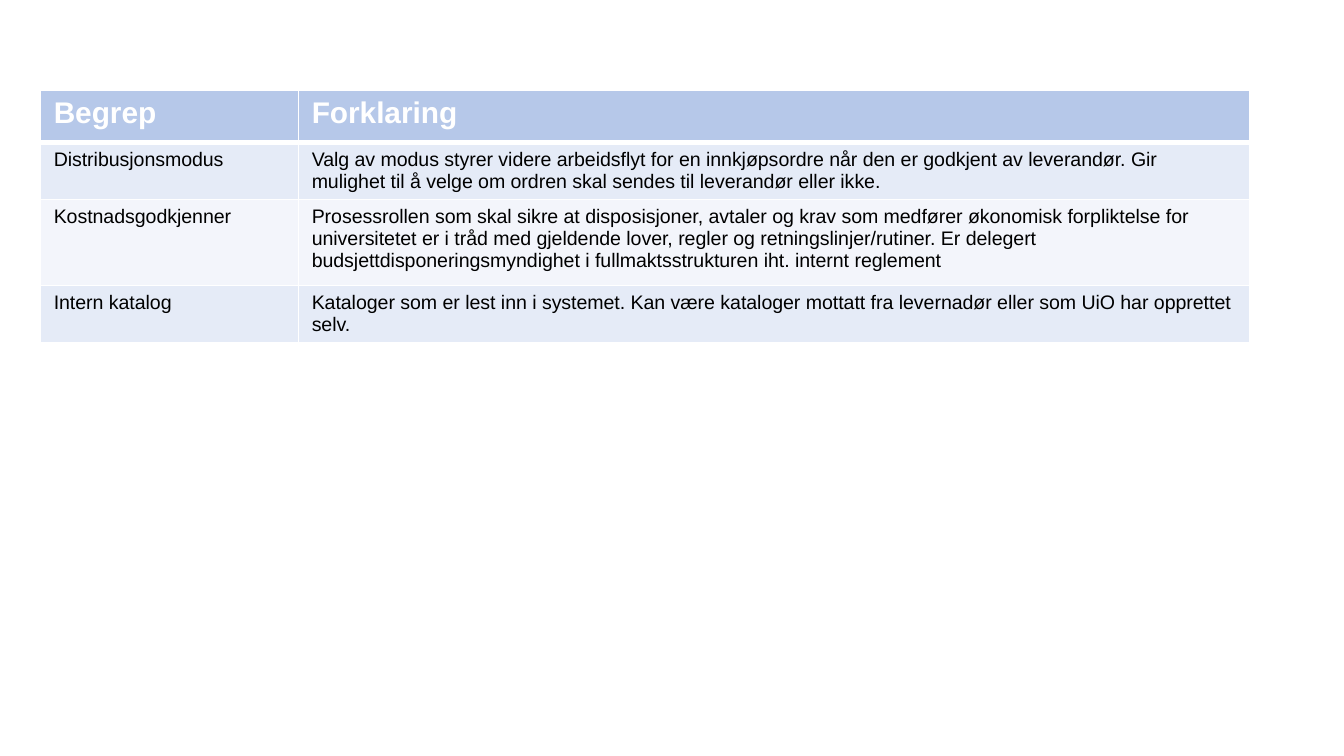
"""Build a slide with a table of procurement terms and their explanations."""
from lxml import etree
from pptx import Presentation
from pptx import util as u
from pptx.dml.color import RGBColor
from pptx.oxml import ns

HUES = {"head": "B6C8E9", "odd": "E5EBF7", "even": "F3F5FB", "line": "FFFFFF", "ink": "000000"}
ROWS = [
    ("Begrep", "Forklaring"),
    ("Distribusjonsmodus",
     "Valg av modus styrer videre arbeidsflyt for en innkjøpsordre når den er godkjent av "
     "leverandør. Gir mulighet til å velge om ordren skal sendes til leverandør eller ikke."),
    ("Kostnadsgodkjenner",
     "Prosessrollen som skal sikre at disposisjoner, avtaler og krav som medfører økonomisk "
     "forpliktelse for universitetet er i tråd med gjeldende lover, regler og "
     "retningslinjer/rutiner. Er delegert budsjettdisponeringsmyndighet i "
     "fullmaktsstrukturen iht. internt reglement"),
    ("Intern katalog",
     "Kataloger som er lest inn i systemet. Kan være kataloger mottatt fra levernadør "
     "eller som UiO har opprettet selv."),
]
WIDTHS = [1.92, 7.08]
HEIGHTS = [0.39, 0.42, 0.64, 0.42]


def write(cell, words, size=10.5, hue="ink", bold=False):
    cell.text = words
    font = cell.text_frame.paragraphs[0].runs[0].font
    font.name = "Arial"
    font.size = u.Pt(size)
    font.bold = bold
    font.color.rgb = RGBColor.from_string(HUES[hue])


def edge(cell, side, width):
    line = etree.SubElement(cell._tc.get_or_add_tcPr(), ns.qn(f"a:ln{side}"), w=str(u.Pt(width)))
    fill = etree.SubElement(line, ns.qn("a:solidFill"))
    etree.SubElement(fill, ns.qn("a:srgbClr"), val=HUES["line"])


deck = Presentation()
deck.slide_width = u.Inches(10)
deck.slide_height = u.Inches(10 * 9 / 16)
slide = deck.slides.add_slide(deck.slide_layouts[6])

table = slide.shapes.add_table(
    len(ROWS), len(WIDTHS), u.Inches(0.3), u.Inches(0.67),
    u.Inches(sum(WIDTHS)), u.Inches(sum(HEIGHTS))).table
for col, width in zip(table.columns, WIDTHS):
    col.width = u.Inches(width)
for row, height in zip(table.rows, HEIGHTS):
    row.height = u.Inches(height)

for r, row in enumerate(ROWS):
    for c, words in enumerate(row):
        cell = table.cell(r, c)
        if r == 0:
            write(cell, words, size=16, hue="line", bold=True)
        else:
            write(cell, words)
        for side in "LRTB":
            thick = (r, side) in [(0, "B"), (1, "T")]
            edge(cell, side, 3 if thick else 1)
        cell.fill.solid()
        shade = "head" if r == 0 else "odd" if r % 2 else "even"
        cell.fill.fore_color.rgb = RGBColor.from_string(HUES[shade])

deck.save("out.pptx")
